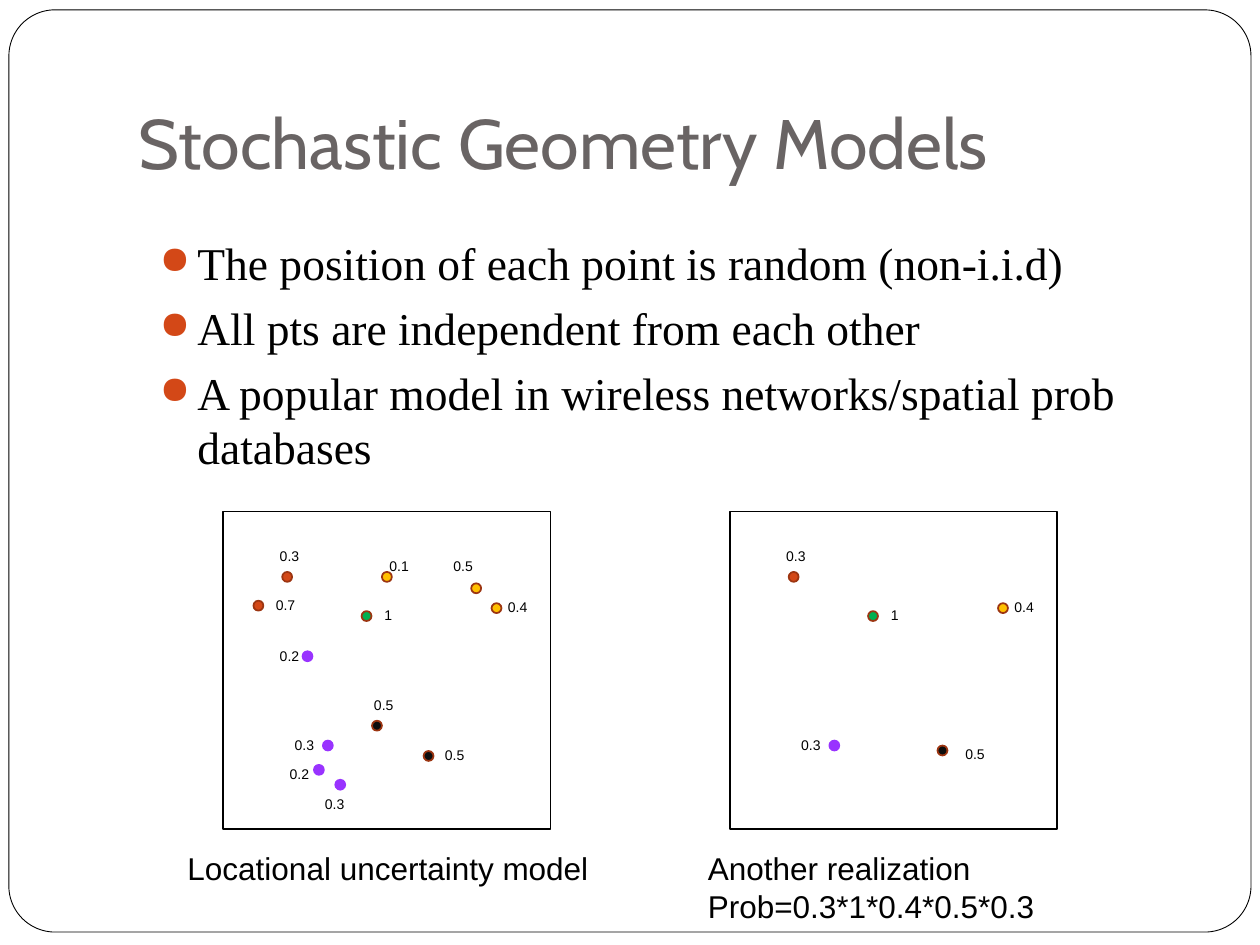
from lxml.etree import SubElement
from pptx import Presentation
from pptx.dml.color import RGBColor
from pptx.enum.shapes import MSO_SHAPE
from pptx.enum.text import MSO_ANCHOR, MSO_AUTO_SIZE, PP_ALIGN
from pptx.oxml.ns import qn
from pptx.util import Cm, Pt

# Content
TITLE = "Stochastic Geometry Models"
BULLETS = [
    "The position of each point is random (non-i.i.d)",
    "All pts are independent from each other",
    "A popular model in wireless networks/spatial prob databases",
]
ORANGE, GREEN, YELLOW, BLACK, PURPLE = "D34817", "00B050", "FFC000", "0D0D0D", "9933FF"
RIM = "9C3511"

# Colour, dot (x, y), probability, label (x, y): cm from the panel corner
RED_PT = (ORANGE, (1.19, 1.22), "0.3", (0.89, 0.61))
GREEN_PT = (GREEN, (2.79, 2.01), "1", (3.0, 1.8))
YELLOW_PT = (YELLOW, (5.41, 1.85), "0.4", (5.49, 1.63))
PURPLE_PT = (PURPLE, (2.01, 4.62), "0.3", (1.19, 4.42))
MODEL = [
    RED_PT, GREEN_PT, YELLOW_PT, PURPLE_PT,
    (ORANGE, (0.61, 1.8), "0.7", (0.81, 1.6)),
    (YELLOW, (3.2, 1.22), "0.1", (3.1, 0.81)),
    (YELLOW, (5.0, 1.45), "0.5", (4.39, 0.81)),
    (BLACK, (3.0, 4.22), "0.5", (2.79, 3.61)),
    (BLACK, (4.04, 4.83), "0.5", (4.22, 4.62)),
    (PURPLE, (1.6, 2.82), "0.2", (0.89, 2.62)),
    (PURPLE, (1.83, 5.11), "0.2", (1.09, 5.0)),
    (PURPLE, (2.26, 5.41), "0.3", (1.8, 5.61)),
]
REALIZATION = [
    RED_PT, GREEN_PT, YELLOW_PT, PURPLE_PT,
    (BLACK, (4.19, 4.72), "0.5", (4.5, 4.6)),
]
# Panel left, points, caption left, caption width, caption height, caption lines
PANELS = [
    (4.5, MODEL, 3.53, 9.8, 1.02, ["Locational uncertainty model"]),
    (14.71, REALIZATION, 14.02, 11.99, 1.8,
     ["Another realization", "Prob=0.3*1*0.4*0.5*0.3"]),
]
PANEL_TOP, PANEL_W, PANEL_H = 10.31, 6.6, 6.4
CAPTION_TOP, DOT = 16.99, 0.2


def rgb(color):
    return RGBColor.from_string(color)


def add_shape(kind, x, y, w, h, fill, line, weight=1):
    sp = s.shapes.add_shape(kind, Cm(x), Cm(y), Cm(w), Cm(h))
    sp.shadow.inherit = False
    if fill:
        sp.fill.solid()
        sp.fill.fore_color.rgb = rgb(fill)
    else:
        sp.fill.background()
    sp.line.color.rgb = rgb(line)
    sp.line.width = Pt(weight)
    return sp


def set_text(tf, lines, size, font, color):
    tf.text = "\n".join(lines)
    for p in tf.paragraphs:
        p.alignment = PP_ALIGN.LEFT
        for r in p.runs:
            r.font.size, r.font.name = Pt(size), font
            r.font.color.rgb = rgb(color)


def add_text(x, y, w, h, lines, size, font="Arial", grow=True):
    tf = s.shapes.add_textbox(Cm(x), Cm(y), Cm(w), Cm(h)).text_frame
    tf.word_wrap = True
    if grow:
        tf.auto_size = MSO_AUTO_SIZE.SHAPE_TO_FIT_TEXT
    set_text(tf, lines, size, font, "000000")
    return tf


def add_bullet(p):
    p.space_before = Pt(5.8)
    pPr = p._p.get_or_add_pPr()
    pPr.set("marL", str(Cm(0.76)))
    pPr.set("indent", str(-Cm(0.76)))
    color = SubElement(pPr, qn("a:buClr"))
    SubElement(color, qn("a:srgbClr"), val=ORANGE)
    SubElement(pPr, qn("a:buSzPct"), val="85000")
    SubElement(pPr, qn("a:buChar"), char="●")


prs = Presentation()
prs.slide_width, prs.slide_height = Cm(25.4), Cm(19.05)
s = prs.slides.add_slide(prs.slide_layouts[5])

# Rounded frame
frame = add_shape(MSO_SHAPE.ROUNDED_RECTANGLE, 0.18, 0.2, 25.04, 18.59,
                  "FFFFFF", "000000", 0.5)
frame.adjustments[0] = 0.05

# Title
title = s.shapes.title
title.left, title.top, title.width, title.height = Cm(2.54), Cm(0.76), Cm(21.59), Cm(3.18)
tf = title.text_frame
set_text(tf, [TITLE], 40, "Cabin", "696464")
tf.vertical_anchor = MSO_ANCHOR.BOTTOM
tf.margin_bottom = Cm(0.25)
# The frame goes behind the title
s.shapes._spTree.insert(2, frame._element)

# Bullets
for p in add_text(2.97, 4.62, 21.59, 3.86, BULLETS, 26, "Times New Roman", False).paragraphs:
    add_bullet(p)

# Panels with their points and captions
for left, points, cap_left, cap_w, cap_h, caption in PANELS:
    add_shape(MSO_SHAPE.RECTANGLE, left, PANEL_TOP, PANEL_W, PANEL_H, None, "000000")
    for color, (x, y), prob, (label_x, label_y) in points:
        add_shape(MSO_SHAPE.OVAL, left + x, PANEL_TOP + y, DOT, DOT,
                  color, PURPLE if color == PURPLE else RIM)
        add_text(left + label_x, PANEL_TOP + label_y, 0.91, 0.61, [prob], 8)
    add_text(cap_left, CAPTION_TOP, cap_w, cap_h, caption, 18)

prs.save("out.pptx")
